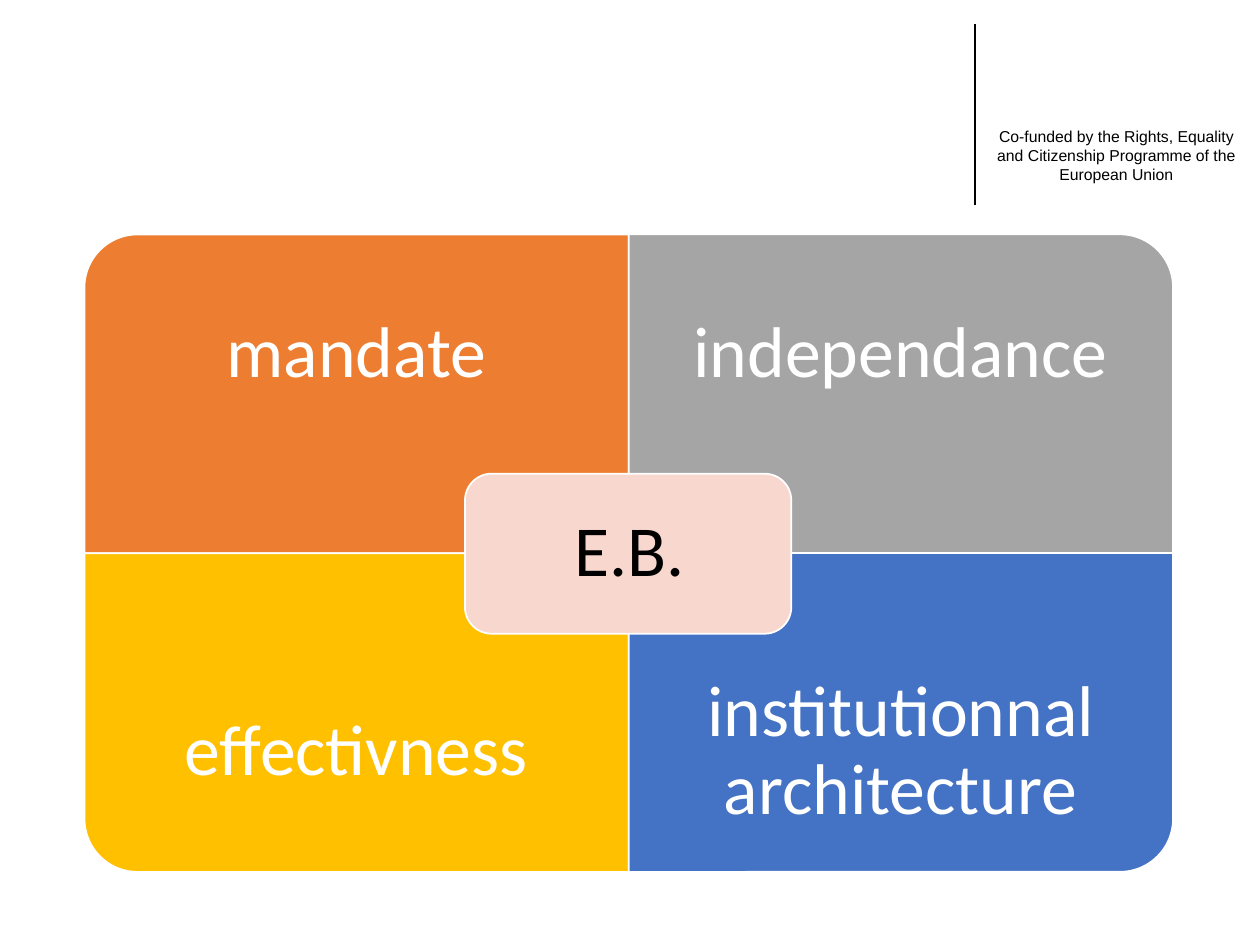
from lxml import etree
from pptx import Presentation
from pptx.dml.color import RGBColor
from pptx.enum import shapes, text
from pptx.oxml.ns import qn
from pptx.util import Inches, Pt


def add_text(slide, words, left, top, width, height, size=41, font="Calibri",
             color="FFFFFF", inset=0.32, anchor=text.MSO_ANCHOR.MIDDLE, spacing=0.9):
    box = slide.shapes.add_textbox(Inches(left), Inches(top), Inches(width), Inches(height))
    frame = box.text_frame
    frame.word_wrap = True
    frame.vertical_anchor = anchor
    if inset is not None:
        frame.margin_left = frame.margin_right = Inches(inset)
        frame.margin_top = frame.margin_bottom = Inches(inset)
    paragraph = frame.paragraphs[0]
    paragraph.alignment = text.PP_ALIGN.CENTER
    paragraph.line_spacing = spacing
    run = paragraph.add_run()
    run.text = words
    run.font.size = Pt(size)
    run.font.name = font
    run.font.color.rgb = RGBColor.from_string(color)


def add_panel(slide, kind, left, top, width, height, fill, rotation=0):
    """Add a white-edged shape covering the given area after its rotation."""
    center_x, center_y = left + width / 2, top + height / 2
    if rotation in (90, 270):
        width, height = height, width
    shape = slide.shapes.add_shape(kind, Inches(center_x - width / 2), Inches(center_y - height / 2),
                                   Inches(width), Inches(height))
    shape.rotation = rotation
    shape.shadow.inherit = False
    shape.fill.solid()
    shape.fill.fore_color.rgb = RGBColor.from_string(fill)
    shape.line.color.rgb = RGBColor.from_string("FFFFFF")
    shape.line.width = Pt(1)


presentation = Presentation()
presentation.slide_width, presentation.slide_height = Inches(10), Inches(7.5)
slide = presentation.slides.add_slide(presentation.slide_layouts[6])

# Funding note and its divider
add_text(slide, "Co-funded by the Rights, Equality and Citizenship Programme of the European Union",
         7.78, 0.96, 2.16, 0.56, size=9, font="Arial", color="000000", inset=None,
         anchor=text.MSO_ANCHOR.TOP, spacing=1.0)
divider = slide.shapes.add_connector(shapes.MSO_CONNECTOR.STRAIGHT,
                                     Inches(7.74), Inches(0.19), Inches(7.74), Inches(1.63))
divider.line.color.rgb = RGBColor.from_string("000000")
divider.line.width = Pt(1)
etree.SubElement(divider._element.spPr, qn("a:effectLst"))

# Four quadrants, each with its rounded corner turned outwards
matrix_left, matrix_top = 0.67, 1.86
quadrant_width, quadrant_height = 4.32, 2.53
label_height = 1.9
quadrants = [
    ("mandate", "ED7D31", 0, 0, 270),
    ("independance", "A5A5A5", 1, 0, 0),
    ("effectivness", "FFC000", 0, 1, 180),
    ("institutionnal architecture", "4472C4", 1, 1, 90),
]
for label, fill, column, row, rotation in quadrants:
    left = matrix_left + column * quadrant_width
    top = matrix_top + row * quadrant_height
    add_panel(slide, shapes.MSO_SHAPE.ROUND_1_RECTANGLE, left, top,
              quadrant_width, quadrant_height, fill, rotation)
    label_top = top + row * (quadrant_height - label_height)
    add_text(slide, label, left, label_top, quadrant_width, label_height)

# Centre
add_panel(slide, shapes.MSO_SHAPE.ROUNDED_RECTANGLE, 3.69, 3.76, 2.59, 1.27, "F8D7CE")
add_text(slide, "E.B.", 3.76, 3.82, 2.47, 1.14, color="000000", inset=0.17)

presentation.save("out.pptx")
